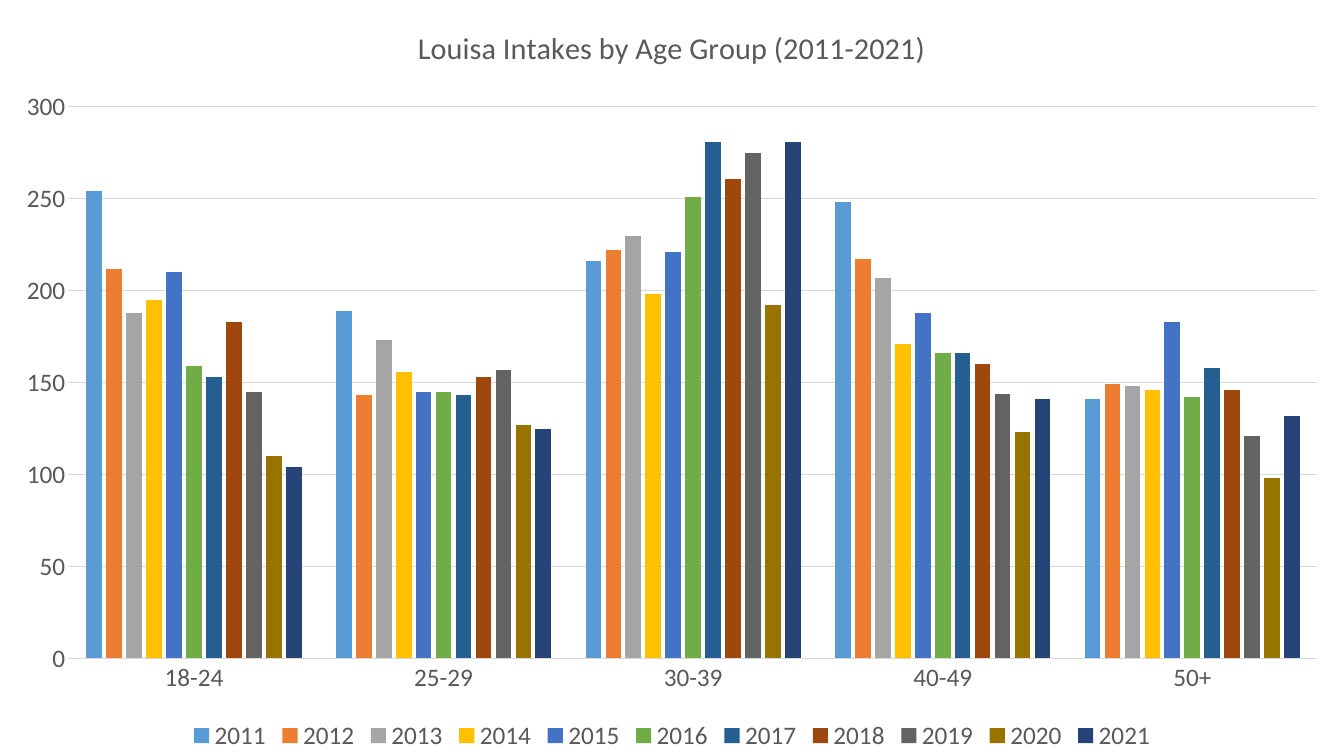
from pptx import Presentation
from pptx.chart.data import CategoryChartData
from pptx.dml.color import RGBColor
from pptx.enum.chart import XL_CHART_TYPE, XL_LEGEND_POSITION, XL_TICK_MARK
from pptx.util import Pt

CLUSTERED = XL_CHART_TYPE.COLUMN_CLUSTERED
LEGEND_BOTTOM = XL_LEGEND_POSITION.BOTTOM
NO_TICKS = XL_TICK_MARK.NONE

SLIDE_WIDTH, SLIDE_HEIGHT = Pt(960), Pt(540)
FONT = "Calibri"
TITLE = "Louisa Intakes by Age Group (2011-2021)"
COLORS = {
    "text": "595959",
    "rule": "D9D9D9",
    "2011": "5B9BD5",
    "2012": "ED7D31",
    "2013": "A5A5A5",
    "2014": "FFC000",
    "2015": "4472C4",
    "2016": "70AD47",
    "2017": "255E91",
    "2018": "9E480E",
    "2019": "636363",
    "2020": "997300",
    "2021": "264478",
}
AGE_GROUPS = ["18-24", "25-29", "30-39", "40-49", "50+"]
INTAKES = {
    "2011": (254, 189, 216, 248, 141),
    "2012": (212, 143, 222, 217, 149),
    "2013": (188, 173, 230, 207, 148),
    "2014": (195, 156, 198, 171, 146),
    "2015": (210, 145, 221, 188, 183),
    "2016": (159, 145, 251, 166, 142),
    "2017": (153, 143, 281, 166, 158),
    "2018": (183, 153, 261, 160, 146),
    "2019": (145, 157, 275, 144, 121),
    "2020": (110, 127, 192, 123, 98),
    "2021": (104, 125, 281, 141, 132),
}


def color(key):
    """Return the named colour."""
    return RGBColor.from_string(COLORS[key])


def style_font(font, size):
    """Set the shared typeface and grey at the given point size."""
    font.name = FONT
    font.size = Pt(size)
    font.bold = False
    font.color.rgb = color("text")


def style_rule(line):
    """Make a thin light grey line."""
    line.color.rgb = color("rule")
    line.width = Pt(0.75)


def add_intake_chart(slide):
    """Add the full-slide column chart and return it."""
    intake_data = CategoryChartData()
    intake_data.categories = AGE_GROUPS
    for year, counts in INTAKES.items():
        intake_data.add_series(year, counts)
    frame = slide.shapes.add_chart(
        CLUSTERED, 0, 0, SLIDE_WIDTH, SLIDE_HEIGHT, intake_data
    )
    style_font(frame.chart.font, 18)
    return frame.chart


def style_title(chart):
    """Write the chart title."""
    chart.has_title = True
    heading = chart.chart_title.text_frame
    heading.text = TITLE
    style_font(heading.paragraphs[0].font, 21.6)
    chart.chart_title.include_in_layout = False


def style_axes(chart):
    """Format the age axis, the count axis and the gridlines."""
    ages, counts = chart.category_axis, chart.value_axis
    for axis in (ages, counts):
        axis.major_tick_mark = NO_TICKS
        axis.minor_tick_mark = NO_TICKS
        style_font(axis.tick_labels.font, 18)
    style_rule(ages.format.line)
    counts.format.line.fill.background()
    counts.minimum_scale, counts.maximum_scale = 0, 300
    counts.major_unit = 50
    counts.has_major_gridlines = True
    style_rule(counts.major_gridlines.format.line)


def style_columns(chart):
    """Space the columns and colour them by year."""
    columns = chart.plots[0]
    columns.gap_width = 219
    columns.overlap = -27
    columns.vary_by_categories = False
    for year in columns.series:
        year.format.fill.solid()
        year.format.fill.fore_color.rgb = color(year.name)


def style_legend(chart):
    """Place the legend of years under the plot."""
    chart.has_legend = True
    chart.legend.position = LEGEND_BOTTOM
    chart.legend.include_in_layout = False
    style_font(chart.legend.font, 18)


def main():
    """Build and save the slide."""
    presentation = Presentation()
    presentation.slide_width = SLIDE_WIDTH
    presentation.slide_height = SLIDE_HEIGHT
    slide = presentation.slides.add_slide(presentation.slide_layouts[6])
    chart = add_intake_chart(slide)
    style_title(chart)
    style_axes(chart)
    style_columns(chart)
    style_legend(chart)
    presentation.save("out.pptx")


if __name__ == "__main__":
    main()
